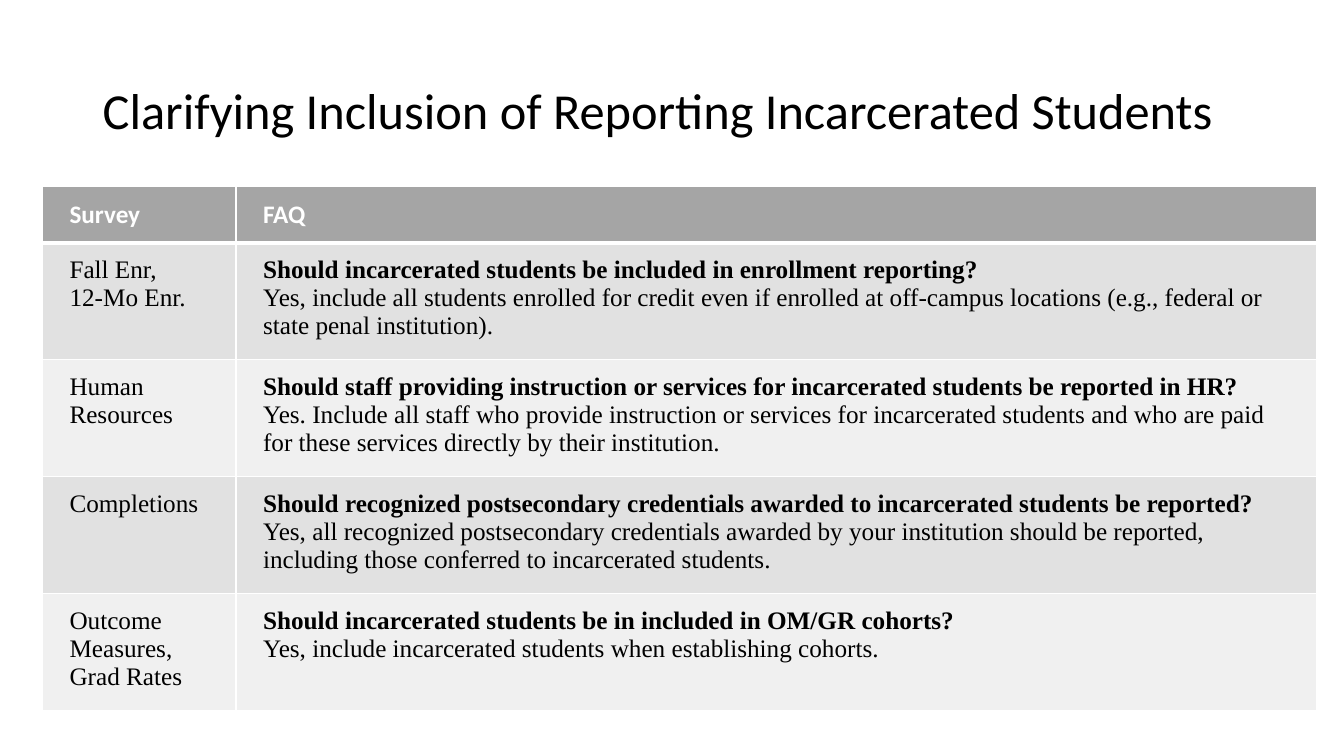
from lxml import etree
from pptx import Presentation
from pptx.dml.color import RGBColor
from pptx.enum.text import MSO_ANCHOR
from pptx.oxml.ns import qn
from pptx.util import Inches, Pt

BLACK = RGBColor(0x00, 0x00, 0x00)
WHITE = RGBColor(0xFF, 0xFF, 0xFF)
HEADER_GRAY = RGBColor(0xA5, 0xA5, 0xA5)
BAND_GRAYS = (RGBColor(0xE1, 0xE1, 0xE1), RGBColor(0xF0, 0xF0, 0xF0))

HEADINGS = ("Survey", "FAQ")
FAQ_ROWS = (
    (("Fall Enr,", "12-Mo Enr."),
     "Should incarcerated students be included in enrollment reporting?",
     "Yes, include all students enrolled for credit even if enrolled at "
     "off-campus locations (e.g., federal or state penal institution)."),
    (("Human Resources",),
     "Should staff providing instruction or services for incarcerated "
     "students be reported in HR?",
     "Yes. Include all staff who provide instruction or services for "
     "incarcerated students and who are paid for these services directly "
     "by their institution."),
    (("Completions",),
     "Should recognized postsecondary credentials awarded to incarcerated "
     "students be reported?",
     "Yes, all recognized postsecondary credentials awarded by your "
     "institution should be reported, including those conferred to "
     "incarcerated students."),
    (("Outcome Measures, Grad Rates",),
     "Should incarcerated students be in included in OM/GR cohorts?",
     "Yes, include incarcerated students when establishing cohorts."),
)


def add_run(paragraph, text, size, font_name, color, bold=False):
    """Add one formatted run to a paragraph."""
    run = paragraph.add_run()
    run.text = text
    run.font.size = Pt(size)
    run.font.name = font_name
    run.font.color.rgb = color
    run.font.bold = bold


def add_title(slide, text):
    """Add the slide title."""
    shape = slide.shapes.add_textbox(
        Inches(0.92), Inches(0.4), Inches(11.5), Inches(1.45))
    frame = shape.text_frame
    frame.word_wrap = True
    frame.vertical_anchor = MSO_ANCHOR.MIDDLE
    paragraph = frame.paragraphs[0]
    paragraph.line_spacing = 0.9
    add_run(paragraph, text, 36, "Calibri", BLACK)


def set_borders(cell, bottom_width=1):
    """Draw white borders around a cell."""
    properties = cell._tc.get_or_add_tcPr()
    widths = {"a:lnL": 1, "a:lnR": 1, "a:lnT": 1, "a:lnB": bottom_width}
    for position, (tag, width) in enumerate(widths.items()):
        line = etree.Element(qn(tag), w=str(Pt(width)))
        fill = etree.SubElement(line, qn("a:solidFill"))
        etree.SubElement(fill, qn("a:srgbClr"), val=str(WHITE))
        properties.insert(position, line)


def fill_cell(cell, lines, fill, font_name, color, header=False):
    """Write (text, bold) lines into a cell and style it."""
    cell.margin_left = cell.margin_right = Inches(0.27)
    cell.margin_top = cell.margin_bottom = Inches(0.13)
    cell.vertical_anchor = MSO_ANCHOR.MIDDLE if header else MSO_ANCHOR.TOP
    cell.fill.solid()
    cell.fill.fore_color.rgb = fill
    frame = cell.text_frame
    for index, (text, bold) in enumerate(lines):
        paragraph = frame.add_paragraph() if index else frame.paragraphs[0]
        add_run(paragraph, text, 18, font_name, color, bold)


def add_faq_table(slide):
    """Add the table of surveys and their questions."""
    row_heights = [0.55] + [1.1] * len(FAQ_ROWS)
    table = slide.shapes.add_table(
        len(row_heights), len(HEADINGS), Inches(0.42), Inches(1.85),
        Inches(12.64), Inches(sum(row_heights))).table
    for column, width in zip(table.columns, (1.92, 10.72)):
        column.width = Inches(width)
    for row, height in zip(table.rows, row_heights):
        row.height = Inches(height)

    for column, heading in enumerate(HEADINGS):
        cell = table.cell(0, column)
        fill_cell(cell, [(heading, True)], HEADER_GRAY, "Calibri", WHITE, True)
        set_borders(cell, bottom_width=3)

    for row, (surveys, question, answer) in enumerate(FAQ_ROWS, start=1):
        contents = ([(survey, False) for survey in surveys],
                    [(question, True), (answer, False)])
        for column, lines in enumerate(contents):
            cell = table.cell(row, column)
            fill_cell(cell, lines, BAND_GRAYS[(row - 1) % 2],
                      "Times New Roman", BLACK)
            set_borders(cell)
            if row == 1:
                top = cell._tc.tcPr.find(qn("a:lnT"))
                top.set("w", str(Pt(3)))


def main():
    """Build the slide and save it."""
    presentation = Presentation()
    presentation.slide_width = Inches(13.33)
    presentation.slide_height = Inches(7.5)
    slide = presentation.slides.add_slide(presentation.slide_layouts[6])
    add_title(slide, "Clarifying Inclusion of Reporting Incarcerated Students")
    add_faq_table(slide)
    presentation.save("out.pptx")


if __name__ == "__main__":
    main()
